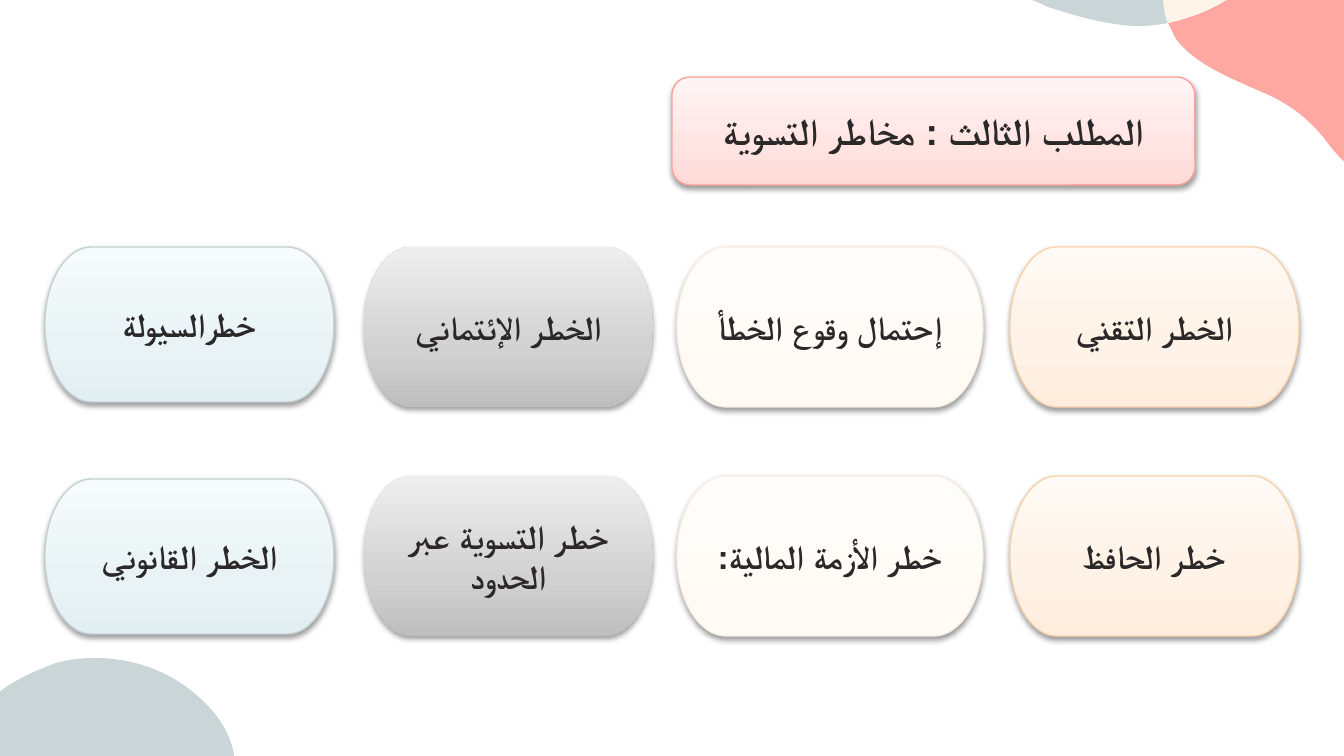
from copy import deepcopy
from math import cos, radians, sin

from lxml import etree
from pptx import Presentation
from pptx.dml.color import RGBColor
from pptx.enum.shapes import MSO_SHAPE
from pptx.enum.text import MSO_ANCHOR, PP_ALIGN
from pptx.oxml.ns import qn
from pptx.util import Pt

TERMINATOR = MSO_SHAPE.FLOWCHART_TERMINATOR
ROUNDED = MSO_SHAPE.FLOWCHART_ALTERNATE_PROCESS
MIDDLE = MSO_ANCHOR.MIDDLE
CENTER = PP_ALIGN.CENTER

EMU_PER_PX = 914400 / 134.4
FONT = "Arial"

INK = RGBColor(0x2A, 0x28, 0x28)
PINK = RGBColor(0xFF, 0xA8, 0xA1)
MIST = RGBColor(0xCA, 0xD5, 0xD7)
CREAM = RGBColor(0xFE, 0xF4, 0xEA)

PINK_LINE = RGBColor(0xFC, 0xA2, 0x9B)
BLUE_LINE = RGBColor(0xC5, 0xD1, 0xD3)
IVORY_LINE = RGBColor(0xF9, 0xEF, 0xE4)
ORANGE_LINE = RGBColor(0xFB, 0xD3, 0xAB)

PINK_STOPS = (RGBColor(0xFF, 0xD9, 0xD7), RGBColor(0xFF, 0xE4, 0xE2), RGBColor(0xFF, 0xF4, 0xF4))
BLUE_STOPS = (RGBColor(0xE1, 0xEF, 0xF2), RGBColor(0xE9, 0xF3, 0xF5), RGBColor(0xF6, 0xFB, 0xFB))
GRAY_STOPS = (RGBColor(0xBE, 0xBE, 0xBE), RGBColor(0xD2, 0xD1, 0xD1), RGBColor(0xEE, 0xEE, 0xEE))
IVORY_STOPS = (RGBColor(0xFF, 0xFA, 0xF4), RGBColor(0xFF, 0xFB, 0xF7), RGBColor(0xFF, 0xFD, 0xFC))
ORANGE_STOPS = (RGBColor(0xFF, 0xED, 0xDD), RGBColor(0xFF, 0xF2, 0xE6), RGBColor(0xFF, 0xFA, 0xF5))

TITLE = "المطلب الثالث : مخاطر التسوية"
RISK_COLUMNS = [
    (0, 289, 155, BLUE_STOPS, BLUE_LINE, (0, 232), ("خطرالسيولة", "الخطر القانوني")),
    (319, 289, 160, GRAY_STOPS, None, (0, 229), ("الخطر الإئتماني", "خطر التسوية عبر الحدود")),
    (632, 306, 160, IVORY_STOPS, IVORY_LINE, (0, 229), ("إحتمال وقوع الخطأ", "خطر الأزمة المالية:")),
    (965, 289, 160, ORANGE_STOPS, ORANGE_LINE, (0, 229), ("الخطر التقني", "خطر الحافظ")),
]

TOP_BLOBS = [
    (PINK, (456, 38), [
        [(417, 141)],
        [(411, 140), (383, 121), (380, 118)],
        [(367, 109), (355, 97), (345, 83)],
        [(332, 67), (317, 56), (297, 48)],
        [(277, 40), (254, 31), (241, 12)],
        [(238, 9), (235, 5), (234, 1)],
        [(254, -3), (273, -11), (289, -24)],
    ]),
    (MIST, (262, -31), [
        [(257, -24), (251, -19), (245, -13)],
        [(173, -40)],
        [(163, -20), (160, 3), (168, 23)],
        [(148, 27), (129, 27), (109, 23)],
        [(89, 20), (67, 13), (48, 7)],
        [(42, 4), (35, 1), (28, -1)],
        [(66, -103)],
    ]),
    (PINK, (480, 73), [
        [(425, 219)],
        [(417, 216), (376, 191), (374, 188)],
        [(356, 173), (337, 157), (324, 138)],
        [(306, 116), (285, 101), (257, 90)],
        [(228, 77), (195, 64), (176, 39)],
        [(173, 34), (171, 28), (168, 23)],
        [(196, 17), (223, 5), (245, -13)],
    ]),
    (CREAM, (245, -13), [
        [(223, 5), (196, 17), (168, 23)],
        [(160, 3), (163, -20), (173, -40)],
    ]),
]
BOTTOM_BLOBS = [
    (MIST, (16, 81), [
        [(-7, 94), (-28, 114), (-44, 141)],
        [(-66, 175), (-40, 209), (-8, 204)],
        [(43, 196), (67, 198), (102, 213)],
        [(144, 232), (169, 248), (206, 229)],
        [(235, 212), (255, 150), (204, 102)],
        [(159, 57), (97, 52), (56, 63)],
        [(43, 68), (30, 73), (16, 81)],
    ]),
]


def px(length):
    """Turn pixels into EMU."""
    return round(length * EMU_PER_PX)


def turn(point, degrees):
    """Rotate a point clockwise about the zero point."""
    x, y = point
    angle = radians(degrees)
    return x * cos(angle) - y * sin(angle), x * sin(angle) + y * cos(angle)


def bend(shape, segments):
    """Join the control points of each three-point segment into a curve."""
    lines = iter(shape.element.spPr.findall(".//" + qn("a:lnTo")))
    for segment in segments:
        group = [next(lines) for _ in segment]
        if len(group) == 3:
            curve = etree.Element(qn("a:cubicBezTo"))
            group[0].addprevious(curve)
            for line in group:
                curve.append(line[0])
                line.getparent().remove(line)


def add_blobs(slide, left, top, rotation, blobs):
    """Draw a cluster of rotated curved blobs from its origin."""
    for color, start, segments in blobs:
        points = [start] + [point for segment in segments for point in segment]
        first, *rest = [tuple(map(px, turn(point, -rotation))) for point in points]
        builder = slide.shapes.build_freeform(*first)
        builder.add_line_segments(rest, close=True)
        shape = builder.convert_to_shape()
        bend(shape, segments)
        center = shape.left + shape.width / 2, shape.top + shape.height / 2
        center_x, center_y = turn(center, rotation)
        shape.left = round(px(left) + center_x - shape.width / 2)
        shape.top = round(px(top) + center_y - shape.height / 2)
        shape.rotation = rotation
        shape.shadow.inherit = False
        shape.fill.solid()
        shape.fill.fore_color.rgb = color
        shape.line.fill.background()


def style_box(shape, stops, line_color):
    """Give a box its upward gradient, outline and soft shadow."""
    shape.fill.gradient()
    shape.fill.gradient_angle = 90
    stop_list = shape.element.spPr.find(".//" + qn("a:gsLst"))
    stop_list.append(deepcopy(stop_list[0]))
    for stop, color, position in zip(shape.fill.gradient_stops, stops, (0, 0.35, 1)):
        stop.color.rgb = color
        stop.position = position
    if line_color is None:
        shape.line.fill.background()
    else:
        shape.line.color.rgb = line_color
        shape.line.width = Pt(0.75)
    shape.shadow.inherit = False
    effects = shape.element.spPr.find(qn("a:effectLst"))
    shadow = etree.SubElement(effects, qn("a:outerShdw"), blurRad=str(Pt(3.1)),
                              dist=str(Pt(1.6)), dir="5400000", rotWithShape="0")
    color = etree.SubElement(shadow, qn("a:srgbClr"), val="000000")
    etree.SubElement(color, qn("a:alpha"), val="38000")


def set_text(shape, text, size):
    """Write centred bold right-to-left text in a shape."""
    frame = shape.text_frame
    frame.text = text
    frame.word_wrap = True
    frame.vertical_anchor = MIDDLE
    paragraph = frame.paragraphs[0]
    paragraph.alignment = CENTER
    paragraph._p.get_or_add_pPr().set("rtl", "1")
    font = paragraph.runs[0].font
    font.name = FONT
    font.size = Pt(size)
    font.bold = True
    font.color.rgb = INK
    etree.SubElement(font._element, qn("a:cs"), typeface=FONT)


def add_box(slide, kind, box, stops, line_color, text, size):
    """Add a gradient box with its label."""
    shape = slide.shapes.add_shape(kind, *map(px, box))
    style_box(shape, stops, line_color)
    set_text(shape, text, size)


def add_risks(slide, left, top):
    """Lay out the risk boxes in columns of two."""
    for x, width, height, stops, line_color, offsets, labels in RISK_COLUMNS:
        for y, label in zip(offsets, labels):
            box = left + x, top + y, width, height
            add_box(slide, TERMINATOR, box, stops, line_color, label, 18)


def main():
    """Build and save the settlement risks slide."""
    presentation = Presentation()
    presentation.slide_width, presentation.slide_height = px(1344), px(756)
    slide = presentation.slides.add_slide(presentation.slide_layouts[6])
    add_blobs(slide, 1000, 0, 20.3, TOP_BLOBS)
    add_box(slide, ROUNDED, (672, 77, 523, 108), PINK_STOPS, PINK_LINE, TITLE, 20)
    add_risks(slide, 45, 247)
    add_blobs(slide, 0, 600, 329.7, BOTTOM_BLOBS)
    presentation.save("out.pptx")


if __name__ == "__main__":
    main()
